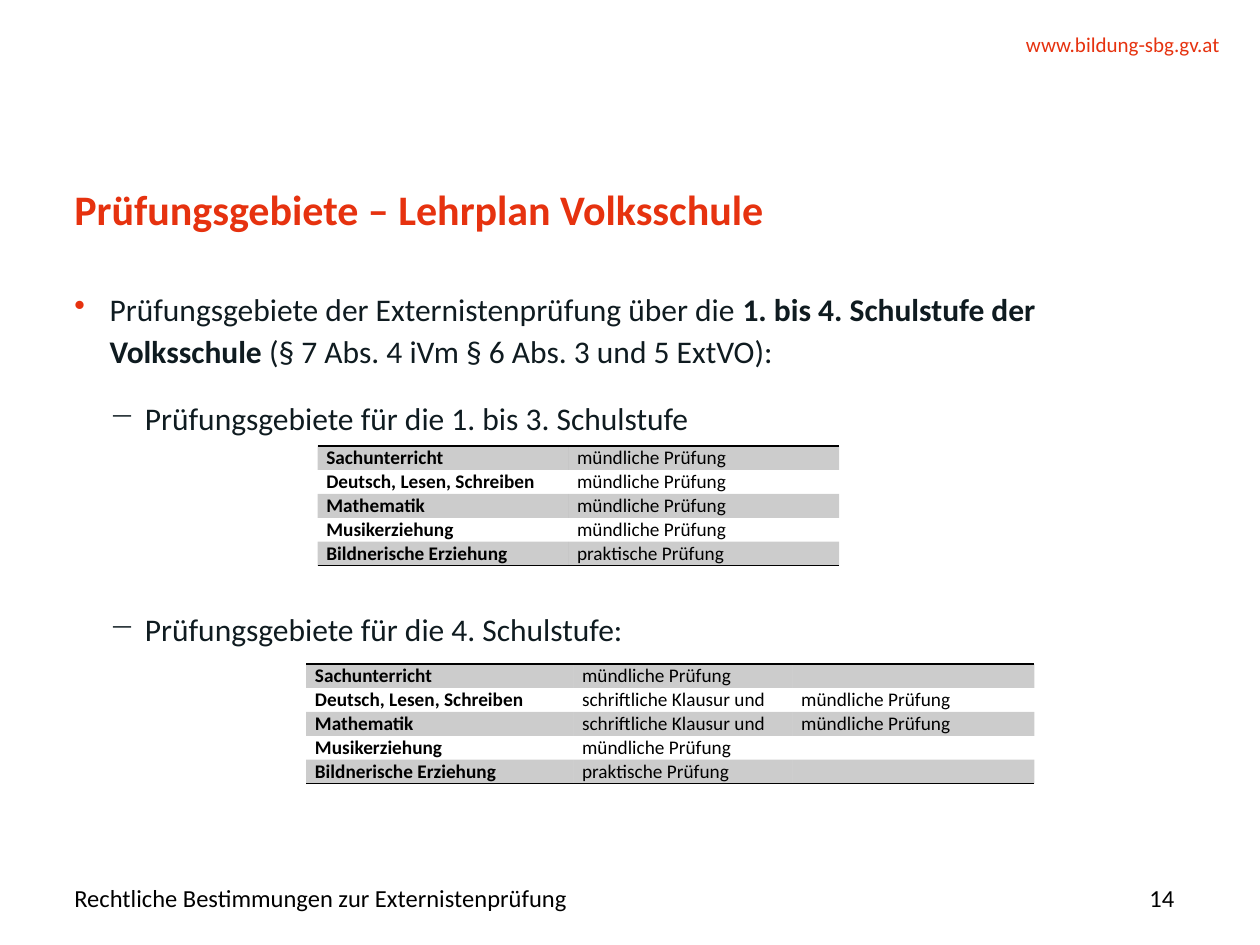
from lxml import etree
from pptx import Presentation
from pptx.dml.color import RGBColor as RGB
from pptx.enum.text import MSO_ANCHOR as ANCHOR, PP_ALIGN as ALIGN
from pptx.oxml.ns import qn
from pptx.util import Inches, Pt

# Content
WEBSITE = "www.bildung-sbg.gv.at"
TITLE = "Prüfungsgebiete – Lehrplan Volksschule"
FOOTER = "Rechtliche Bestimmungen zur Externistenprüfung"
PAGE = "14"
# Outline: level, space before in points, [(text, bold)]
OUTLINE = [
    (0, 0, [("Prüfungsgebiete der Externistenprüfung über die ", False),
            ("1. bis 4. Schulstufe der Volksschule", True),
            (" (§ 7 Abs. 4 iVm § 6 Abs. 3 und 5 ExtVO):", False)]),
    (1, 0, [("Prüfungsgebiete für die 1. bis 3. Schulstufe", False)]),
    (1, 82.4, [("Prüfungsgebiete für die 4. Schulstufe:", False)]),
]
ORAL, WRITTEN, PRACTICAL = "mündliche Prüfung", "schriftliche Klausur und", "praktische Prüfung"
SUBJECTS = ["Sachunterricht", "Deutsch, Lesen, Schreiben", "Mathematik",
            "Musikerziehung", "Bildnerische Erziehung"]
# Exam tables: left, top, column widths, exam types per subject
EXAM_TABLES = [
    (2.52, 3.54, [1.99, 2.15], [(ORAL,), (ORAL,), (ORAL,), (ORAL,), (PRACTICAL,)]),
    (2.43, 5.27, [2.12, 1.74, 1.92],
     [(ORAL, ""), (WRITTEN, ORAL), (WRITTEN, ORAL), (ORAL, ""), (PRACTICAL, "")]),
]

THEME = dict(font="Calibri", accent="E6320F", body="0F1B20", black="000000",
             site=12, title=24, text=18, footer=14, table=11)
ROW_HEIGHT = 0.19
INDENT = 0.28
BULLETS = "•−"
NO_STYLE = "{2D5ABB26-0587-4C30-8999-92F81FD0307C}"

prs = Presentation()
prs.slide_width, prs.slide_height = Inches(10), Inches(7.5)
slide = prs.slides.add_slide(prs.slide_layouts[6])


def style(run, size, color, bold=False):
    font = run.font
    font.name, font.size, font.bold = THEME["font"], Pt(THEME[size]), bold
    font.color.rgb = RGB.from_string(THEME[color])


def add_frame(left, top, width, height, anchor=ANCHOR.TOP):
    frame = slide.shapes.add_textbox(*map(Inches, (left, top, width, height))).text_frame
    frame.margin_left = frame.margin_top = frame.margin_right = frame.margin_bottom = 0
    frame.word_wrap, frame.vertical_anchor = True, anchor
    return frame


def add_line(text, box, size, color, align=ALIGN.LEFT, bold=False, anchor=ANCHOR.TOP):
    frame = add_frame(*box, anchor)
    frame.text = text
    line = frame.paragraphs[0]
    line.alignment = align
    style(line.runs[0], size, color, bold)
    return line


def add_bullet(paragraph, level):
    props = paragraph._p.get_or_add_pPr()
    props.set("marL", str(Inches(INDENT * (level + 1))))
    props.set("indent", str(-Inches(INDENT)))
    if level == 0:
        color = etree.SubElement(props, qn("a:buClr"))
        etree.SubElement(color, qn("a:srgbClr"), val=THEME["accent"])
    etree.SubElement(props, qn("a:buChar"), char=BULLETS[level])


def add_rule(cell, side):
    line = etree.Element(qn(f"a:{side}"), w=str(Pt(1)))
    fill = etree.SubElement(line, qn("a:solidFill"))
    etree.SubElement(fill, qn("a:srgbClr"), val=THEME["black"])
    cell._tc.get_or_add_tcPr().insert(0, line)


def shade(cell):
    cell.fill.solid()
    cell.fill.fore_color.rgb = RGB.from_string(THEME["black"])
    color = cell._tc.tcPr.find(f"{qn('a:solidFill')}/{qn('a:srgbClr')}")
    etree.SubElement(color, qn("a:alpha"), val="20000")


def fill_cell(cell, text, bold):
    cell.margin_left = cell.margin_right = Inches(0.07)
    cell.margin_top = cell.margin_bottom = 0
    paragraph = cell.text_frame.paragraphs[0]
    if text:
        paragraph.text = text
        paragraph.alignment = ALIGN.JUSTIFY
        style(paragraph.runs[0], "table", "black", bold)
    else:  # keeps an empty cell from stretching its row
        etree.SubElement(paragraph._p, qn("a:endParaRPr"), sz=str(THEME["table"] * 100))


def add_exam_table(left, top, widths, exams):
    rows = [(subject, *kinds) for subject, kinds in zip(SUBJECTS, exams)]
    table = slide.shapes.add_table(
        len(rows), len(widths), Inches(left), Inches(top),
        Inches(sum(widths)), Inches(ROW_HEIGHT * len(rows))).table
    table._tbl.tblPr.find(qn("a:tableStyleId")).text = NO_STYLE
    for column, width in zip(table.columns, widths):
        column.width = Inches(width)
    for r, texts in enumerate(rows):
        for c, text in enumerate(texts):
            cell = table.cell(r, c)
            fill_cell(cell, text, bold=c == 0)
            if r % 2 == 0:
                shade(cell)
            else:
                cell.fill.background()
            if r == 0:
                add_rule(cell, "lnT")
            if r == len(rows) - 1:
                add_rule(cell, "lnB")


# Header and title
add_line(WEBSITE, (7.27, 0.25, 2.41, 0.2), "site", "accent", ALIGN.RIGHT)
title = add_line(TITLE, (0.59, 1.44, 8.73, 0.91), "title", "accent", bold=True)
title.line_spacing = Pt(30)

# Outline
outline = add_frame(0.59, 2.27, 8.62, 4.29)
for i, (level, before, parts) in enumerate(OUTLINE):
    item = outline.paragraphs[0] if i == 0 else outline.add_paragraph()
    item.level = level
    item.line_spacing, item.space_after = Pt(24), Pt(14.2)
    if before:
        item.space_before = Pt(before)
    add_bullet(item, level)
    for text, bold in parts:
        run = item.add_run()
        run.text = text
        style(run, "text", "body", bold)

# Footer
add_line(FOOTER, (0.59, 6.98, 7.52, 0.29), "footer", "black", anchor=ANCHOR.MIDDLE)
add_line(PAGE, (8.43, 6.98, 0.89, 0.29), "footer", "black", ALIGN.RIGHT, anchor=ANCHOR.MIDDLE)

# Exam tables
for exam_table in EXAM_TABLES:
    add_exam_table(*exam_table)

prs.save("out.pptx")
